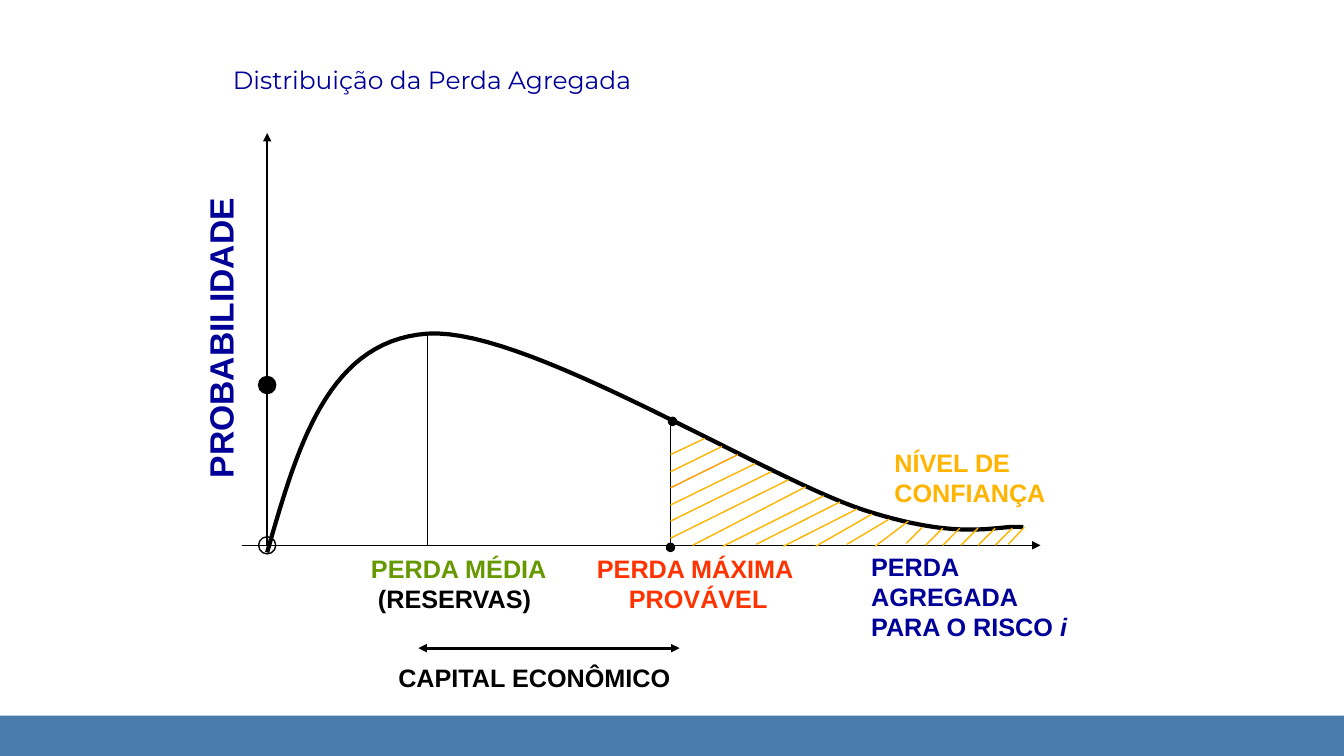
import pptx
import pptx.util
import pptx.dml.color
import pptx.enum.shapes
import pptx.enum.text
import pptx.oxml.ns
import lxml.etree

RGB = pptx.dml.color.RGBColor
NAVY = RGB(0x00, 0x00, 0x99)
BLACK = RGB(0x00, 0x00, 0x00)
GREEN = RGB(0x66, 0x99, 0x00)
RED = RGB(0xFF, 0x33, 0x00)
GOLD = RGB(0xFF, 0xB4, 0x00)
AMBER = RGB(0xFF, 0x99, 0x00)
STEEL = RGB(0x49, 0x7C, 0xAA)

SCALE = 9144
STEPS = 30
ZERO = 541
LEFT = 265
MEAN = 424
LIMIT = 665

CURVE = [
    [(265, 548), (295, 443), (325, 338), (424, 331)],
    [(424, 331), (522, 324), (758, 474), (857, 506)],
    [(857, 506), (956, 538), (989, 520), (1015, 523)],
]
LONG = [
    (687, 541, 799, 483), (717, 542, 817, 492), (750, 540, 833, 498),
    (777, 542, 850, 505), (809, 542, 865, 510), (840, 540, 882, 515),
    (868, 542, 901, 517), (899, 539, 915, 523), (1000, 540, 1016, 523),
]


def px(*nums):
    return [round(n * SCALE) for n in nums]


def draw_line(slide, ends, color=BLACK, width=1, tips=()):
    kind = pptx.enum.shapes.MSO_CONNECTOR.STRAIGHT
    line = slide.shapes.add_connector(kind, *px(*ends))
    line.line.color.rgb = color
    line.line.width = pptx.util.Pt(width)
    qn = pptx.oxml.ns.qn
    for tip in tips:
        lxml.etree.SubElement(line.line._get_or_add_ln(), qn("a:" + tip), type="triangle")
    lxml.etree.SubElement(line._element.spPr, qn("a:effectLst"))


def draw_dot(slide, x, y, size, solid=True):
    kind = pptx.enum.shapes.MSO_SHAPE.OVAL
    dot = slide.shapes.add_shape(kind, *px(x - size / 2, y - size / 2, size, size))
    dot.shadow.inherit = False
    if solid:
        dot.fill.solid()
        dot.fill.fore_color.rgb = BLACK
    else:
        dot.fill.background()
    dot.line.color.rgb = BLACK
    dot.line.width = pptx.util.Pt(1)


def draw_band(slide):
    kind = pptx.enum.shapes.MSO_SHAPE.RECTANGLE
    band = slide.shapes.add_shape(kind, *px(0, 710, 1333, 40))
    band.shadow.inherit = False
    band.fill.solid()
    band.fill.fore_color.rgb = STEEL
    band.line.fill.background()


def draw_curve(slide):
    points = [px(*CURVE[0][0])]
    for a, b, c, d in CURVE:
        for step in range(1, STEPS + 1):
            t = step / STEPS
            u = 1 - t
            points.append(px(*(
                u**3 * a[k] + 3 * u * u * t * b[k] + 3 * u * t * t * c[k] + t**3 * d[k]
                for k in (0, 1)
            )))
    path = slide.shapes.build_freeform(*points[0])
    path.add_line_segments(points[1:], close=False)
    curve = path.convert_to_shape()
    curve.shadow.inherit = False
    curve.fill.background()
    curve.line.color.rgb = BLACK
    curve.line.width = pptx.util.Pt(3)


def style_font(font, color, size, name="Arial", bold=True):
    font.name = name
    font.size = pptx.util.Pt(size)
    font.bold = bold
    font.color.rgb = color


def add_label(slide, box, text, color, size=18, wrap=False, center=False):
    label = slide.shapes.add_textbox(*px(*box))
    frame = label.text_frame
    frame.word_wrap = wrap
    frame.auto_size = pptx.enum.text.MSO_AUTO_SIZE.SHAPE_TO_FIT_TEXT
    frame.margin_left, frame.margin_top, frame.margin_right, frame.margin_bottom = px(5, 5, 5, 5)
    frame.text = text
    align = pptx.enum.text.PP_ALIGN
    for para in frame.paragraphs:
        para.alignment = align.CENTER if center else align.LEFT
        for run in para.runs:
            style_font(run.font, color, size)
    return label


def set_title(slide, text):
    title = slide.shapes.title
    title.left, title.top, title.width, title.height = px(231, 59, 842, 35)
    frame = title.text_frame
    frame.margin_left = frame.margin_top = frame.margin_right = frame.margin_bottom = 0
    frame.vertical_anchor = pptx.enum.text.MSO_ANCHOR.BOTTOM
    frame.auto_size = pptx.enum.text.MSO_AUTO_SIZE.NONE
    frame.word_wrap = True
    frame.text = text
    para = frame.paragraphs[0]
    para.alignment = pptx.enum.text.PP_ALIGN.LEFT
    style_font(para.runs[0].font, NAVY, 17.8, "Montserrat", False)


def draw_hatch(slide):
    for i in range(6):
        shift = round(16.6 * i)
        ends = (LIMIT, 451 + shift, 699 + shift, 435 + round(8.2 * i))
        draw_line(slide, ends, AMBER if i == 2 else GOLD)
    for ends in LONG:
        draw_line(slide, ends, GOLD)
    for i in range(5):
        x = 918 + round(17.3 * i)
        draw_line(slide, (x, 541, x + 17, 524), GOLD)


def add_labels(slide):
    mean = add_label(slide, (363, 544, 190, 71), "PERDA MÉDIA\n (RESERVAS)", GREEN, wrap=True)
    mean.text_frame.paragraphs[1].runs[0].font.color.rgb = BLACK
    add_label(slide, (583, 544, 219, 68), "PERDA MÁXIMA \nPROVÁVEL", RED, center=True)
    risk = add_label(slide, (859, 542, 206, 97), "PERDA\nAGREGADA\nPARA O RISCO ", NAVY)
    run = risk.text_frame.paragraphs[2].add_run()
    run.text = "i"
    style_font(run.font, NAVY, 18)
    run.font.italic = True
    side = add_label(slide, (73, 311, 289, 48), "PROBABILIDADE", NAVY, size=24)
    side.rotation = 270
    add_label(slide, (390, 652, 281, 38), "CAPITAL ECONÔMICO", BLACK)
    add_label(slide, (882, 439, 189, 68), "NÍVEL DE CONFIANÇA", GOLD, wrap=True)


def main():
    deck = pptx.Presentation()
    deck.slide_width, deck.slide_height = px(1333, 750)
    slide = deck.slides.add_slide(deck.slide_layouts[5])
    set_title(slide, "Distribuição da Perda Agregada")
    draw_curve(slide)
    draw_line(slide, (LIMIT, ZERO, LIMIT, 416))
    draw_line(slide, (MEAN, ZERO, MEAN, 332))
    draw_dot(slide, LIMIT, 543, 8)
    draw_dot(slide, LIMIT + 2, 418, 8)
    draw_dot(slide, LEFT, ZERO, 17, solid=False)
    draw_dot(slide, LEFT, 382, 17)
    draw_line(slide, (LEFT, ZERO, LEFT, 132), tips=["tailEnd"])
    draw_line(slide, (240, ZERO, 1032, ZERO), tips=["tailEnd"])
    draw_line(slide, (415, 643, 674, 643), width=2, tips=["headEnd", "tailEnd"])
    draw_hatch(slide)
    add_labels(slide)
    draw_band(slide)
    deck.save("out.pptx")


if __name__ == "__main__":
    main()
